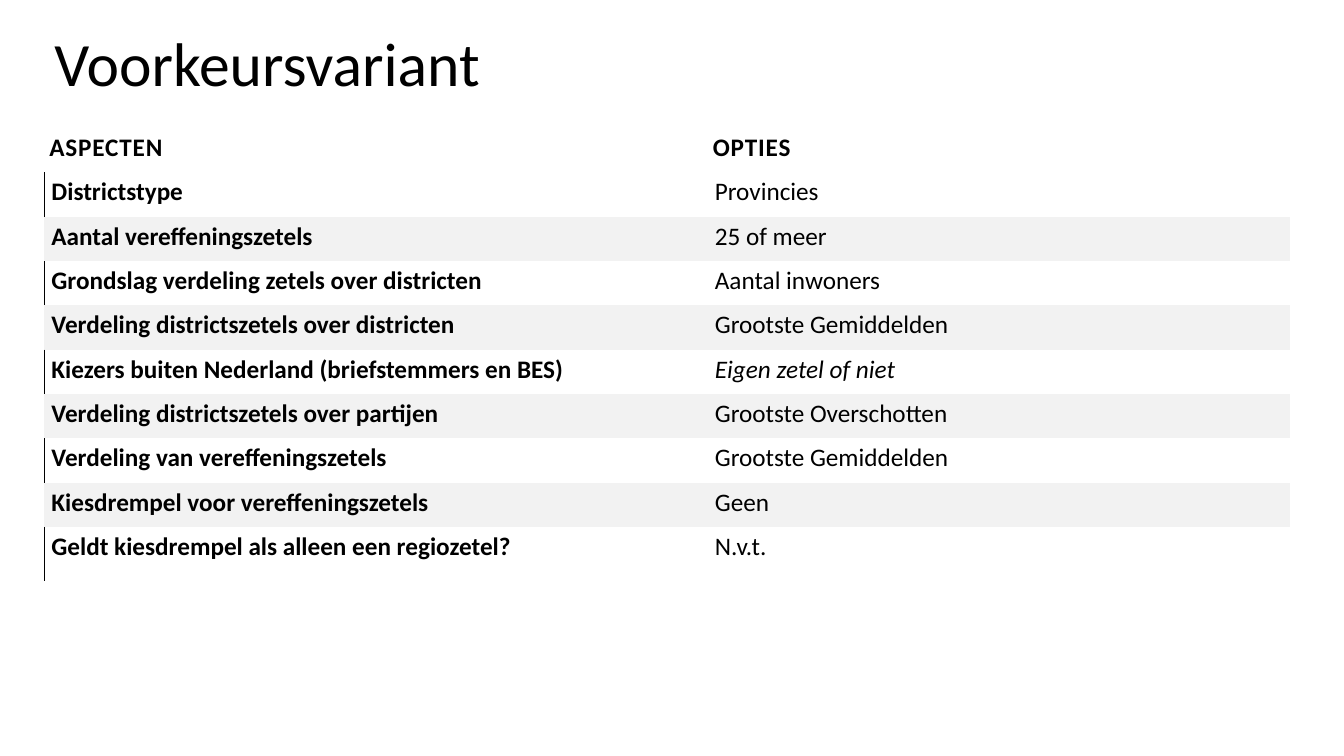
from lxml import etree
from pptx import Presentation
from pptx.dml.color import RGBColor
from pptx.enum import text
from pptx.oxml import ns
from pptx.util import Inches, Pt

TITLE = "Voorkeursvariant"
HEADER = ("ASPECTEN", "OPTIES")
ASPECTS = [
    ("Districtstype", "Provincies"),
    ("Aantal vereffeningszetels", "25 of meer"),
    ("Grondslag verdeling zetels over districten", "Aantal inwoners"),
    ("Verdeling districtszetels over districten", "Grootste Gemiddelden"),
    ("Kiezers buiten Nederland (briefstemmers en BES)", "Eigen zetel of niet"),
    ("Verdeling districtszetels over partijen", "Grootste Overschotten"),
    ("Verdeling van vereffeningszetels", "Grootste Gemiddelden"),
    ("Kiesdrempel voor vereffeningszetels", "Geen"),
    ("Geldt kiesdrempel als alleen een regiozetel?", "N.v.t."),
]
UNDECIDED = "Eigen zetel of niet"

THEME = {
    "font": "Calibri", "ink": "000000", "band": "F2F2F2",
    "title": 44, "body": 18, "title_spacing": 0.9, "body_spacing": 1.15,
}
LEFT, TABLE_TOP = 0.44, 1.18
COLUMNS = (6.58, 5.77)
HEADER_HEIGHT, ROW_HEIGHT, LAST_HEIGHT = 0.53, 0.44, 0.54
NO_STYLE_NO_GRID = "{2D5ABB26-0587-4C30-8999-92F81FD0307C}"


def write(tf, words, size="body", bold=False, italic=False, tracking=0, indent=0):
    """Put one formatted line in a text frame; tracking in points, indent in inches."""
    p = tf.paragraphs[0]
    p.line_spacing = THEME[size + "_spacing"]
    if indent:
        p._p.get_or_add_pPr().set("indent", str(Inches(indent)))
    r = p.add_run()
    r.text = words
    r.font.name = THEME["font"]
    r.font.size = Pt(THEME[size])
    r.font.bold = bold
    r.font.italic = italic
    r.font.color.rgb = RGBColor.from_string(THEME["ink"])
    if tracking:
        r.font._element.set("spc", str(round(tracking * 100)))


def set_margins(cell, top):
    cell.margin_left = cell.margin_right = Inches(0.05)
    cell.margin_top, cell.margin_bottom = Inches(top), Inches(0.09)


def left_border(cell):
    line = etree.Element(ns.qn("a:lnL"), w=str(Pt(1)))
    fill = etree.SubElement(line, ns.qn("a:solidFill"))
    etree.SubElement(fill, ns.qn("a:srgbClr"), val=THEME["ink"])
    cell._tc.get_or_add_tcPr().insert(0, line)


def add_title(slide):
    sp = slide.shapes.add_textbox(Inches(LEFT), Inches(-0.51), Inches(12.67), Inches(1.55))
    tf = sp.text_frame
    tf.word_wrap = True
    tf.vertical_anchor = text.MSO_ANCHOR.BOTTOM
    write(tf, TITLE, size="title")


def add_aspects_table(slide):
    heights = [HEADER_HEIGHT] + [ROW_HEIGHT] * (len(ASPECTS) - 1) + [LAST_HEIGHT]
    frame = slide.shapes.add_table(
        len(heights), len(COLUMNS), Inches(LEFT), Inches(TABLE_TOP),
        Inches(sum(COLUMNS)), Inches(sum(heights)))
    table = frame.table
    table.first_row = table.horz_banding = False
    table._tbl.tblPr.find(ns.qn("a:tableStyleId")).text = NO_STYLE_NO_GRID
    for column, width in zip(table.columns, COLUMNS):
        column.width = Inches(width)
    for row, height in zip(table.rows, heights):
        row.height = Inches(height)

    for col, words in enumerate(HEADER):
        cell = table.cell(0, col)
        set_margins(cell, top=0.09)
        cell.vertical_anchor = text.MSO_ANCHOR.BOTTOM
        cell.fill.background()
        write(cell.text_frame, words, bold=True, tracking=0.6)

    for row, pair in enumerate(ASPECTS, start=1):
        banded = row % 2 == 0
        for col, words in enumerate(pair):
            cell = table.cell(row, col)
            set_margins(cell, top=0)
            if banded:
                cell.fill.solid()
                cell.fill.fore_color.rgb = RGBColor.from_string(THEME["band"])
            else:
                cell.fill.background()
            write(cell.text_frame, words, bold=col == 0,
                  italic=words == UNDECIDED, indent=0.02)
        if not banded:
            left_border(table.cell(row, 0))


def main():
    prs = Presentation()
    prs.slide_width, prs.slide_height = Inches(13.33), Inches(7.5)
    slide = prs.slides.add_slide(prs.slide_layouts[6])
    add_title(slide)
    add_aspects_table(slide)
    prs.save("out.pptx")


if __name__ == "__main__":
    main()
